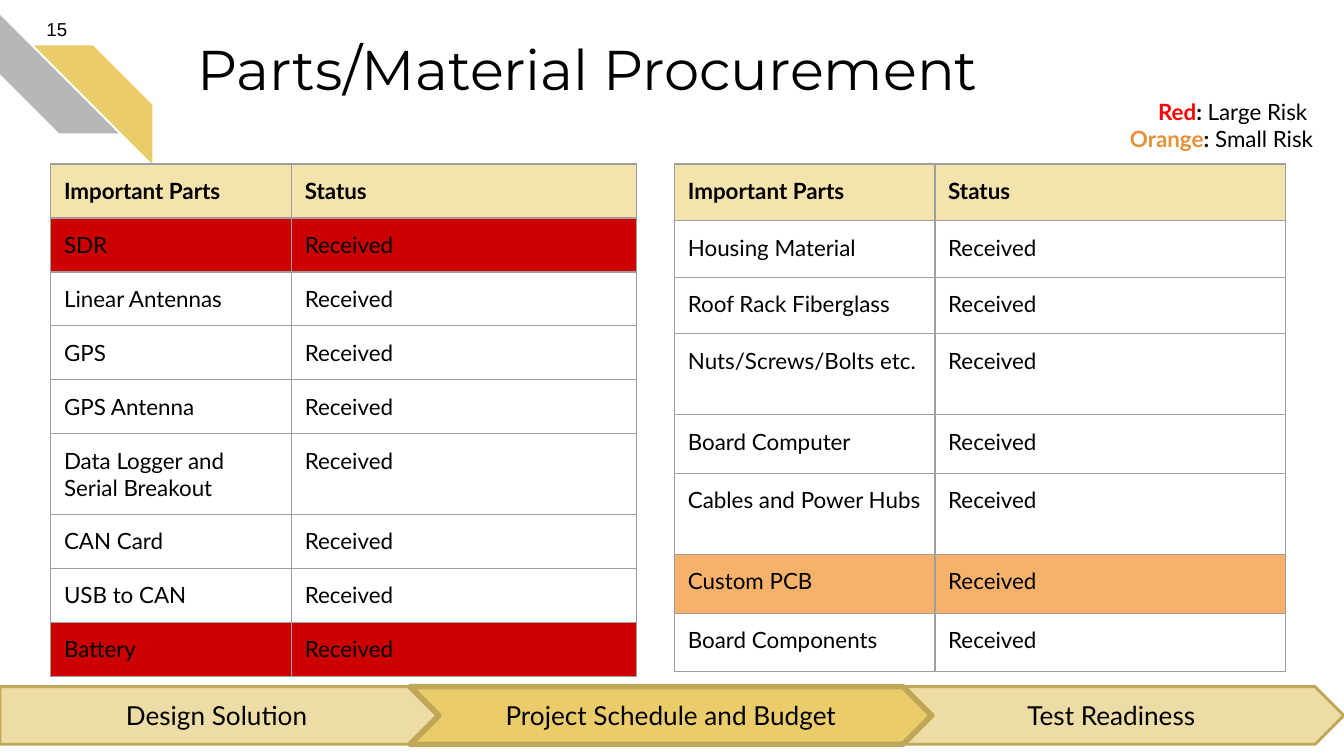
"""Build the parts and material procurement slide."""
import dataclasses
from typing import Optional

import lxml.etree
import pptx
import pptx.dml.color
import pptx.enum.shapes
import pptx.enum.text
import pptx.oxml.ns
import pptx.util

Cm = pptx.util.Cm
Align = pptx.enum.text.PP_ALIGN
Anchor = pptx.enum.text.MSO_ANCHOR
Preset = pptx.enum.shapes.MSO_SHAPE
BLACK = "000000"
GOLD = "EBCC6A"
PALE_GOLD = "EDDCA5"
DARK_GOLD = "C0A757"
RED = "CC0000"
ORANGE = "F6B26B"
GREY = "9E9E9E"
INSET = Cm(0.25)


@dataclasses.dataclass
class Box:
    left: float
    top: float
    width: float
    height: float

    def lengths(self) -> list:
        return [Cm(value) for value in dataclasses.astuple(self)]


@dataclasses.dataclass
class Run:
    text: str
    size: float = 12
    font: str = "Lato"
    color: str = BLACK
    bold: bool = False


@dataclasses.dataclass
class Item:
    name: str
    height: float
    fill: Optional[str] = None


@dataclasses.dataclass
class StatusTable:
    left: float
    widths: tuple
    header_height: float
    items: list


@dataclasses.dataclass
class Stage:
    text: str
    preset: Preset
    left: float
    width: float
    fill: str
    line_width: float


STRIPES = [
    (Box(0, 0.28, 2.24, 2.24), 270, "B7B7B7"),
    (Box(0.64, 0.86, 2.24, 2.24), 90, GOLD),
]
TABLES = [
    StatusTable(0.96, (4.55, 6.52), 1.02, [
        Item("SDR", 1.02, RED),
        Item("Linear Antennas", 1.02),
        Item("GPS", 1.02),
        Item("GPS Antenna", 1.02),
        Item("Data Logger and Serial Breakout", 1.52),
        Item("CAN Card", 1.02),
        Item("USB to CAN", 1.02),
        Item("Battery", 1.02, RED),
    ]),
    StatusTable(12.75, (4.92, 6.62), 1.07, [
        Item("Housing Material", 1.07),
        Item("Roof Rack Fiberglass", 1.07),
        Item("Nuts/Screws/Bolts etc.", 1.53),
        Item("Board Computer", 1.11),
        Item("Cables and Power Hubs", 1.53),
        Item("Custom PCB", 1.11, ORANGE),
        Item("Board Components", 1.11),
    ]),
]
STAGES = [
    Stage("Test Readiness", Preset.CHEVRON, 16.61, 8.79, PALE_GOLD, 1.5),
    Stage("Design Solution", Preset.PENTAGON, 0, 8.46, PALE_GOLD, 1.5),
    Stage("Project Schedule and Budget", Preset.CHEVRON, 7.75, 9.86, GOLD, 3),
]
LEGEND = [
    [Run("Red", color="FF0000", bold=True), Run(": ", bold=True), Run("Large Risk ")],
    [Run("Orange", color="E69138", bold=True), Run(":", bold=True), Run(" Small Risk")],
]


def rgb(color: str) -> pptx.dml.color.RGBColor:
    return pptx.dml.color.RGBColor.from_string(color)


def add_run(paragraph, content: Run) -> None:
    run = paragraph.add_run()
    run.text = content.text
    run.font.size = pptx.util.Pt(content.size)
    run.font.name = content.font
    run.font.bold = content.bold
    run.font.color.rgb = rgb(content.color)


def set_margins(holder) -> None:
    holder.margin_left = holder.margin_right = INSET
    holder.margin_top = holder.margin_bottom = INSET


def write(frame, lines: list, align=Align.LEFT, anchor=Anchor.TOP) -> None:
    frame.word_wrap = True
    frame.auto_size = pptx.enum.text.MSO_AUTO_SIZE.NONE
    frame.vertical_anchor = anchor
    set_margins(frame)
    for index, line in enumerate(lines):
        paragraph = frame.add_paragraph() if index else frame.paragraphs[0]
        paragraph.alignment = align
        for content in line:
            add_run(paragraph, content)


def add_text(slide, box: Box, lines: list, anchor=Anchor.TOP) -> None:
    shape = slide.shapes.add_textbox(*box.lengths())
    write(shape.text_frame, lines, Align.RIGHT, anchor)


def add_filled(slide, preset: Preset, box: Box, color: str):
    shape = slide.shapes.add_shape(preset, *box.lengths())
    shape.shadow.inherit = False
    shape.fill.solid()
    shape.fill.fore_color.rgb = rgb(color)
    shape.line.fill.background()
    return shape


def add_borders(cell) -> None:
    qn = pptx.oxml.ns.qn
    properties = cell._tc.get_or_add_tcPr()
    for index, side in enumerate(("a:lnL", "a:lnR", "a:lnT", "a:lnB")):
        line = lxml.etree.Element(qn(side), w=str(pptx.util.Pt(0.75)))
        fill = lxml.etree.SubElement(line, qn("a:solidFill"))
        lxml.etree.SubElement(fill, qn("a:srgbClr"), val=GREY)
        properties.insert(index, line)


def fill_cell(cell, text: str, fill: Optional[str], header: bool) -> None:
    add_run(cell.text_frame.paragraphs[0], Run(text, bold=header))
    set_margins(cell)
    if fill:
        cell.fill.solid()
        cell.fill.fore_color.rgb = rgb(fill)
    else:
        cell.fill.background()
    if header:
        qn = pptx.oxml.ns.qn
        color = cell._tc.tcPr.find(".//" + qn("a:srgbClr"))
        lxml.etree.SubElement(color, qn("a:alpha"), val="55000")
    add_borders(cell)


def add_status_table(slide, status_table: StatusTable) -> None:
    rows = [Item("Important Parts", status_table.header_height, GOLD), *status_table.items]
    box = Box(status_table.left, 3.1, sum(status_table.widths), sum(row.height for row in rows))
    table = slide.shapes.add_table(len(rows), 2, *box.lengths()).table
    table.first_row = table.horz_banding = False
    for column, width in zip(table.columns, status_table.widths):
        column.width = Cm(width)
    for index, row in enumerate(rows):
        header = index == 0
        table.rows[index].height = Cm(row.height)
        for column, text in enumerate((row.name, "Status" if header else "Received")):
            fill_cell(table.cell(index, column), text, row.fill, header)


def add_stage(slide, stage: Stage) -> None:
    shape = add_filled(slide, stage.preset, Box(stage.left, 12.98, stage.width, 1.09), stage.fill)
    shape.line.color.rgb = rgb(DARK_GOLD)
    shape.line.width = pptx.util.Pt(stage.line_width)
    write(shape.text_frame, [[Run(stage.text, 14)]], Align.CENTER, Anchor.MIDDLE)


def main() -> None:
    presentation = pptx.Presentation()
    presentation.slide_width, presentation.slide_height = Cm(25.4), Cm(14.29)
    slide = presentation.slides.add_slide(presentation.slide_layouts[5])
    for box, rotation, color in STRIPES:
        add_filled(slide, Preset.DIAGONAL_STRIPE, box, color).rotation = rotation
    title = slide.shapes.title
    title.left, title.top, title.width, title.height = Box(3.48, 0.41, 15.8, 1.98).lengths()
    write(title.text_frame, [[Run("Parts/Material Procurement", 30, "Montserrat")]])
    add_text(slide, Box(0, 0, 1.52, 1.09), [[Run("15", 10, "Arial")]], Anchor.MIDDLE)
    for status_table in TABLES:
        add_status_table(slide, status_table)
    for stage in STAGES:
        add_stage(slide, stage)
    add_text(slide, Box(19.91, 1.6, 5.16, 1.24), LEGEND)
    presentation.save("out.pptx")


if __name__ == "__main__":
    main()
